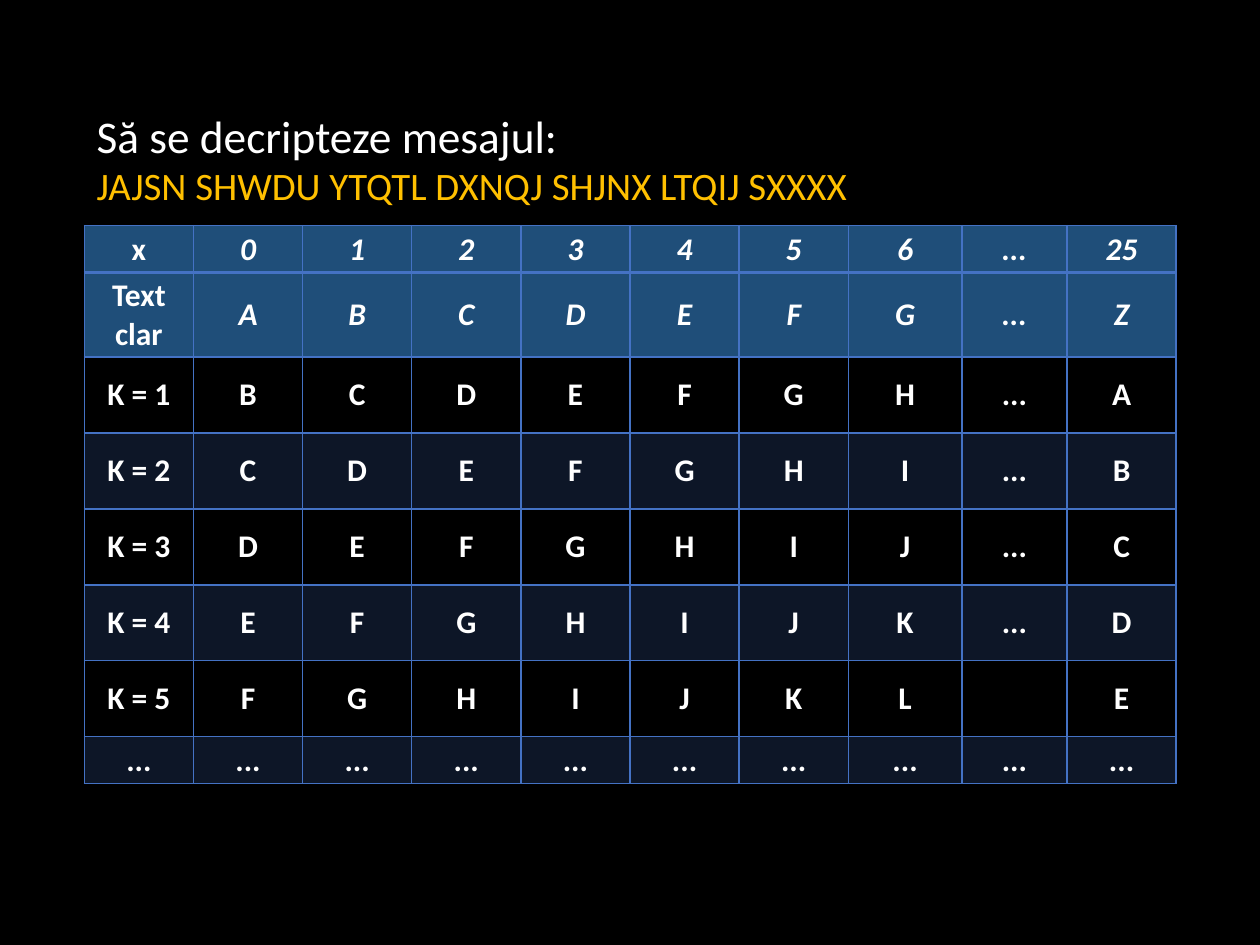
from pptx import Presentation
from pptx.dml.color import RGBColor
from pptx.enum.text import MSO_ANCHOR, PP_ALIGN
from pptx.oxml.ns import qn
from pptx.util import Cm, Pt
from lxml import etree

MIDDLE = MSO_ANCHOR.MIDDLE
CENTER = PP_ALIGN.CENTER
FONT = "Calibri"
COLORS = {
    "background": "000000",
    "text": "FFFFFF",
    "cipher": "FFC000",
    "header": "1F4E79",
    "accent": "4472C4",
}
ALPHABET = "ABCDEFGHIJKLMNOPQRSTUVWXYZ"
DOTS = "..."
SHOWN = 7
COLUMN_WIDTHS = [2.2] * 7 + [2.29, 2.12, 2.2]
ROW_HEIGHTS = [0.85] + [1.53] * 6 + [0.85]


def color(name):
    return RGBColor.from_string(COLORS[name])


def add_span(para, text, size, color_name, bold=False, italic=False):
    span = para.add_run()
    span.text = text
    span.font.name = FONT
    span.font.size = Pt(size)
    span.font.bold = bold
    span.font.italic = italic
    span.font.color.rgb = color(color_name)


def add_task(page):
    box = page.shapes.add_textbox(Cm(1.7), Cm(2.03), Cm(22), Cm(2.92))
    frame = box.text_frame
    frame.word_wrap = True
    frame.margin_top = Cm(0.27)
    lines = [
        ("Să se decripteze mesajul:", 25.9, "text", 0),
        ("JAJSN SHWDU YTQTL DXNQJ SHJNX LTQIJ SXXXX", 22.2, "cipher", 2),
    ]
    for index, (text, size, color_name, gap) in enumerate(lines):
        para = frame.add_paragraph() if index else frame.paragraphs[0]
        para.line_spacing = 0.9
        para.space_before = Pt(gap)
        add_span(para, text, size, color_name)


def cipher_rows():
    def shifted(label, key):
        letters = ALPHABET[key:] + ALPHABET[:key]
        dots = "" if key == 5 else DOTS
        return [label, *letters[:SHOWN], dots, letters[-1]]

    numbers = ["x", *map(str, range(SHOWN)), DOTS, str(len(ALPHABET) - 1)]
    keys = [shifted(f"K = {key}", key) for key in range(1, 6)]
    return [numbers, shifted("Text clar", 0), *keys, [DOTS] * len(numbers)]


def set_borders(cell, widths):
    properties = cell._tc.get_or_add_tcPr()
    for index, (side, width) in enumerate(widths.items()):
        line = etree.Element(qn(f"a:{side}"), w=str(Pt(width)))
        fill = etree.SubElement(line, qn("a:solidFill"))
        etree.SubElement(fill, qn("a:srgbClr"), val=COLORS["accent"])
        properties.insert(index, line)


def fill_cell(cell, row):
    if row < 2:
        cell.fill.solid()
        cell.fill.fore_color.rgb = color("header")
    elif row % 2:
        cell.fill.solid()
        cell.fill.fore_color.rgb = color("accent")
        tint = cell._tc.tcPr.find(".//" + qn("a:srgbClr"))
        etree.SubElement(tint, qn("a:alpha"), val="20000")
    else:
        cell.fill.background()


def style_cell(cell, row, column, text):
    fill_cell(cell, row)
    set_borders(cell, {
        "lnL": 1,
        "lnR": 1,
        "lnT": 2 if row == 1 else 1,
        "lnB": 2 if row == 0 else 1,
    })
    cell.vertical_anchor = MIDDLE
    cell.margin_left = cell.margin_right = Cm(0.18)
    cell.margin_top = cell.margin_bottom = Cm(0.09)
    para = cell.text_frame.paragraphs[0]
    para.alignment = CENTER
    if text:
        add_span(para, text, 18, "text", bold=True, italic=row < 2 and column > 0)


def add_cipher_table(page):
    rows = cipher_rows()
    table = page.shapes.add_table(
        len(rows), len(COLUMN_WIDTHS), Cm(1.7), Cm(4.55), Cm(22), Cm(11.28)
    ).table
    for column, width in zip(table.columns, COLUMN_WIDTHS):
        column.width = Cm(width)
    for row, height in zip(table.rows, ROW_HEIGHTS):
        row.height = Cm(height)
    for row, texts in enumerate(rows):
        for column, text in enumerate(texts):
            style_cell(table.cell(row, column), row, column, text)


def main():
    deck = Presentation()
    deck.slide_width = Cm(25.4)
    deck.slide_height = Cm(19.05)
    page = deck.slides.add_slide(deck.slide_layouts[6])
    page.background.fill.solid()
    page.background.fill.fore_color.rgb = color("background")
    add_task(page)
    add_cipher_table(page)
    deck.save("out.pptx")


if __name__ == "__main__":
    main()
